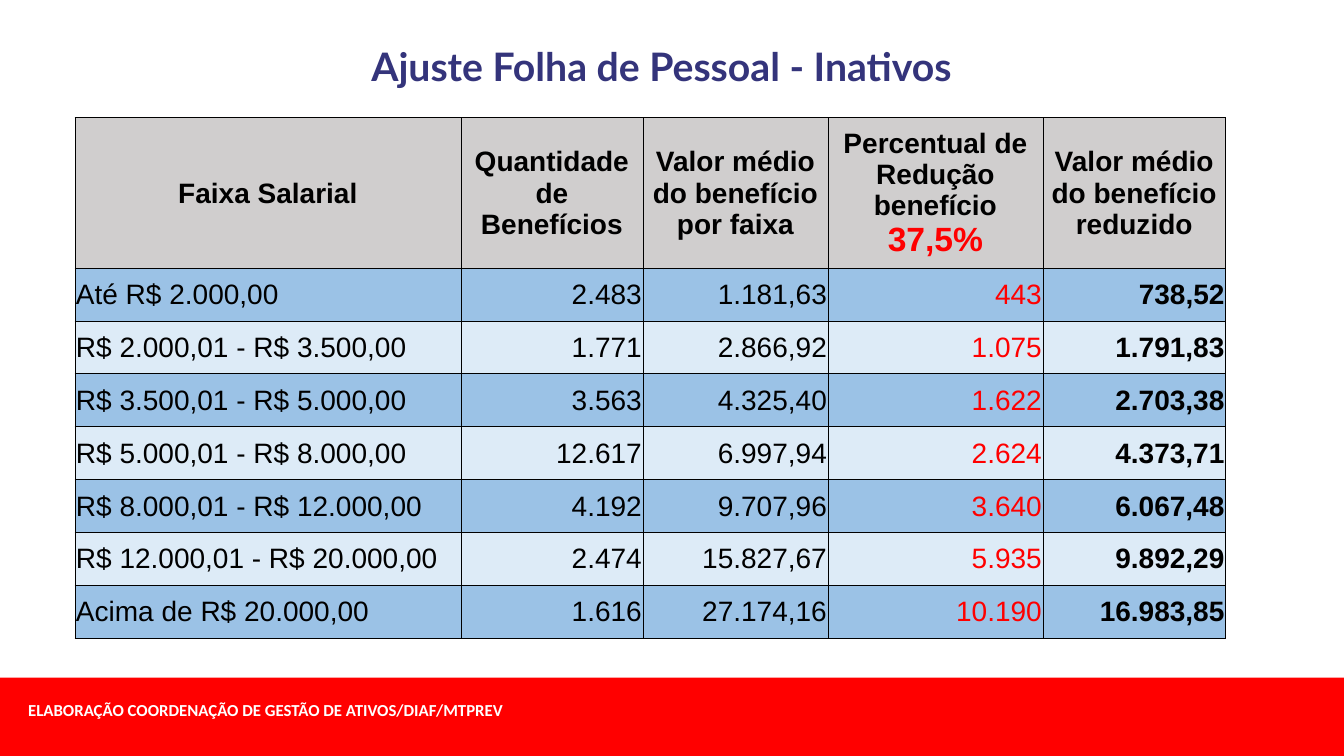
import lxml.etree
import pptx
import pptx.dml.color
import pptx.enum.shapes
import pptx.enum.text
import pptx.oxml.ns
import pptx.util

Pt = pptx.util.Pt
ALIGN = pptx.enum.text.PP_ALIGN
COLORS = {
    "red": "FF0000", "white": "FFFFFF", "navy": "34347B", "black": "000000",
    "header": "D0CECE", "dark_band": "9BC2E6", "light_band": "DDEBF7",
}


def add_run(paragraph, text, size, font_name, color, bold):
    run = paragraph.add_run()
    run.text = text
    run.font.size = Pt(size)
    run.font.name = font_name
    run.font.bold = bold
    run.font.color.rgb = pptx.dml.color.RGBColor.from_string(COLORS[color])


def style_cell(cell, fill):
    cell.margin_left = cell.margin_right = cell.margin_top = Pt(0.75)
    cell.margin_bottom = 0
    cell.vertical_anchor = pptx.enum.text.MSO_ANCHOR.MIDDLE
    properties = cell._tc.get_or_add_tcPr()
    for side in ("a:lnL", "a:lnR", "a:lnT", "a:lnB"):
        line = lxml.etree.SubElement(properties, pptx.oxml.ns.qn(side), w=str(Pt(0.5)))
        solid = lxml.etree.SubElement(line, pptx.oxml.ns.qn("a:solidFill"))
        lxml.etree.SubElement(solid, pptx.oxml.ns.qn("a:srgbClr"), val=COLORS["black"])
    cell.fill.solid()
    cell.fill.fore_color.rgb = pptx.dml.color.RGBColor.from_string(COLORS[fill])


presentation = pptx.Presentation()
presentation.slide_width = Pt(960)
presentation.slide_height = Pt(540)
slide = presentation.slides.add_slide(presentation.slide_layouts[6])

footer_bar = slide.shapes.add_shape(
    pptx.enum.shapes.MSO_SHAPE.RECTANGLE, 0, Pt(484), Pt(960), Pt(56))
footer_bar.shadow.inherit = False
footer_bar.fill.solid()
footer_bar.fill.fore_color.rgb = pptx.dml.color.RGBColor.from_string(COLORS["red"])
footer_bar.line.fill.background()

text_boxes = [
    ((13, 496, 669, 29), "ELABORAÇÃO COORDENAÇÃO DE GESTÃO DE ATIVOS/DIAF/MTPREV",
     12, "Calibri", "white", ALIGN.LEFT),
    ((19.5, 26.5, 906, 75), "Ajuste Folha de Pessoal - Inativos",
     28, "Lato", "navy", ALIGN.CENTER),
]
for place, text, size, font_name, color, alignment in text_boxes:
    text_box = slide.shapes.add_textbox(*[Pt(length) for length in place])
    text_box.text_frame.word_wrap = True
    paragraph = text_box.text_frame.paragraphs[0]
    paragraph.alignment = alignment
    add_run(paragraph, text, size, font_name, color, True)

headers = [
    "Faixa Salarial",
    "Quantidade de Benefícios",
    "Valor médio do benefício por faixa",
    "Percentual de Redução benefício ",
    "Valor médio do benefício reduzido",
]
salary_bands = [
    ("Até R$ 2.000,00", "2.483", "1.181,63", "443", "738,52"),
    ("R$ 2.000,01 - R$ 3.500,00", "1.771", "2.866,92", "1.075", "1.791,83"),
    ("R$ 3.500,01 - R$ 5.000,00", "3.563", "4.325,40", "1.622", "2.703,38"),
    ("R$ 5.000,01 - R$ 8.000,00", "12.617", "6.997,94", "2.624", "4.373,71"),
    ("R$ 8.000,01 - R$ 12.000,00", "4.192", "9.707,96", "3.640", "6.067,48"),
    ("R$ 12.000,01 - R$ 20.000,00", "2.474", "15.827,67", "5.935", "9.892,29"),
    ("Acima de R$ 20.000,00", "1.616", "27.174,16", "10.190", "16.983,85"),
]
column_widths = [275.75, 130, 132.25, 153.5, 130.5]
header_height, band_height = 107.5, 37.75
reduction_column, reduced_column = 3, 4

table = slide.shapes.add_table(
    len(salary_bands) + 1, len(headers), Pt(53.5), Pt(84), Pt(sum(column_widths)),
    Pt(header_height + band_height * len(salary_bands))).table
table.first_row = False
table.horz_banding = False
for column, width in zip(table.columns, column_widths):
    column.width = Pt(width)
for row in table.rows:
    row.height = Pt(band_height)
table.rows[0].height = Pt(header_height)

for column_index, header in enumerate(headers):
    cell = table.cell(0, column_index)
    style_cell(cell, "header")
    paragraph = cell.text_frame.paragraphs[0]
    paragraph.alignment = ALIGN.CENTER
    add_run(paragraph, header, 20, "Arial", "black", True)
    if column_index == reduction_column:
        add_run(paragraph, "37,5%", 24, "Arial", "red", True)

for row_index, values in enumerate(salary_bands, start=1):
    for column_index, value in enumerate(values):
        cell = table.cell(row_index, column_index)
        style_cell(cell, "dark_band" if row_index % 2 else "light_band")
        paragraph = cell.text_frame.paragraphs[0]
        paragraph.alignment = ALIGN.RIGHT if column_index else ALIGN.LEFT
        color = "red" if column_index == reduction_column else "black"
        add_run(paragraph, value, 20, "Arial", color, column_index == reduced_column)

presentation.save("out.pptx")
